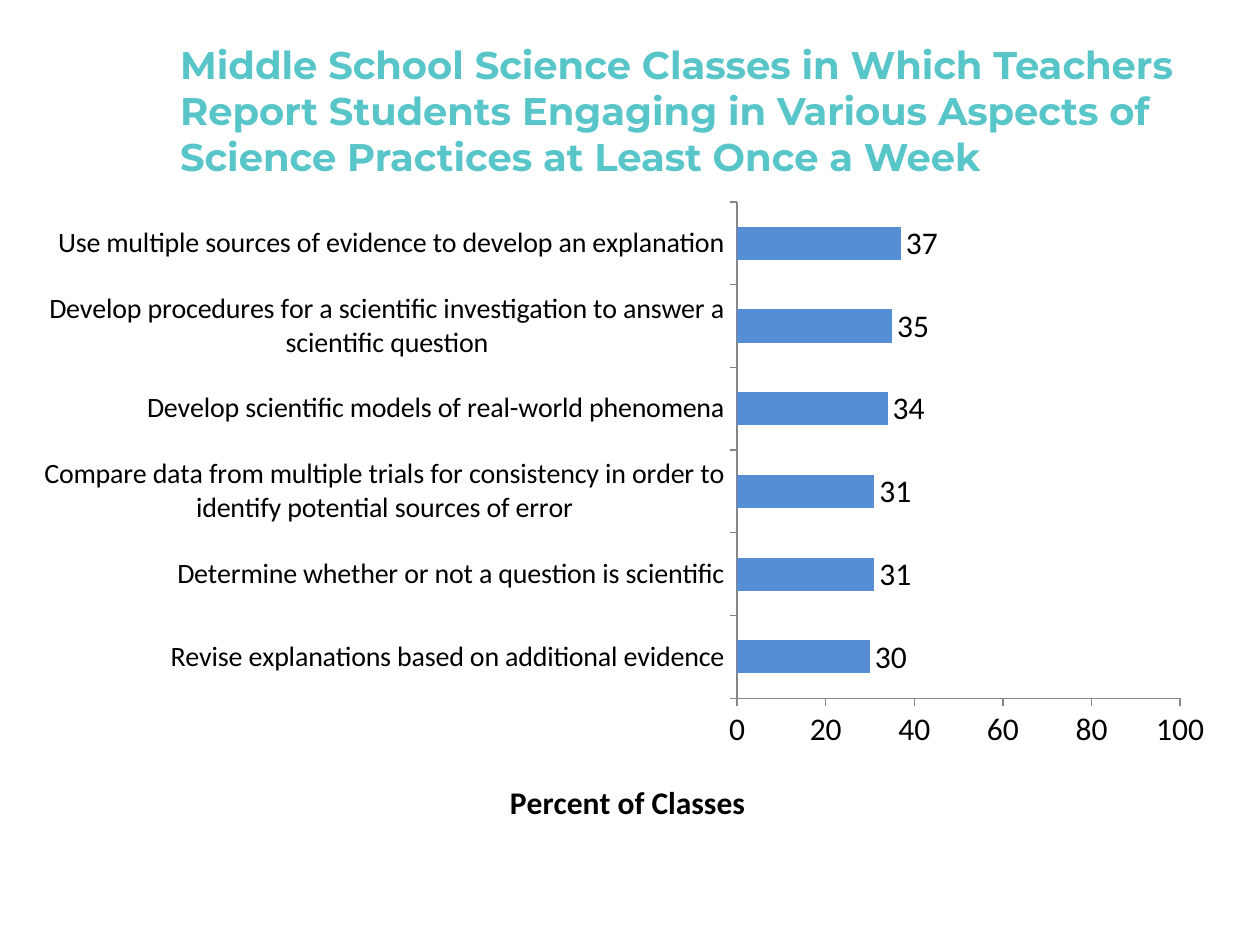
"""Build a slide with a bar chart of weekly science practices in middle school classes."""
from lxml import etree
from pptx import Presentation
from pptx.chart.data import CategoryChartData
from pptx.dml.color import RGBColor
from pptx.enum.chart import XL_CHART_TYPE as CT, XL_LABEL_POSITION as LP, XL_TICK_MARK as TM
from pptx.enum.text import MSO_ANCHOR, MSO_AUTO_SIZE, PP_ALIGN
from pptx.oxml.ns import qn
from pptx.util import Inches, Pt

TITLE = ("Middle School Science Classes in Which Teachers Report Students Engaging "
         "in Various Aspects of Science Practices at Least Once a Week")
AXIS_TITLE = "Percent of Classes"
PRACTICES = [
    ("Revise explanations based on additional evidence", 30),
    ("Determine whether or not a question is scientific", 31),
    ("Compare data from multiple trials for consistency in order to "
     "identify potential sources of error", 31),
    ("Develop scientific models of real-world phenomena", 34),
    ("Develop procedures for a scientific investigation to answer a "
     "scientific question", 35),
    ("Use multiple sources of evidence to develop an explanation", 37),
]
TEAL = RGBColor(0x58, 0xC5, 0xC9)
BLUE = RGBColor(0x55, 0x8E, 0xD5)
GRAY = RGBColor(0x86, 0x86, 0x86)
BLACK = RGBColor(0, 0, 0)


def set_layout(parent, index, **values):
    for old in parent.findall(qn("c:layout")):
        parent.remove(old)
    layout = etree.Element(qn("c:layout"))
    manual = etree.SubElement(layout, qn("c:manualLayout"))
    for name, value in values.items():
        etree.SubElement(manual, qn(f"c:{name}")).set("val", str(value))
    parent.insert(index, layout)


def add_title(s):
    sp = s.shapes.title
    sp.left, sp.top, sp.width, sp.height = map(Inches, (1.33, 0.25, 8.17, 1.25))
    tf = sp.text_frame
    tf.word_wrap = True
    tf.auto_size = MSO_AUTO_SIZE.NONE
    tf.vertical_anchor = MSO_ANCHOR.MIDDLE
    p = tf.paragraphs[0]
    p.alignment = PP_ALIGN.LEFT
    r = p.add_run()
    r.text = TITLE
    r.font.name, r.font.size, r.font.bold = "Montserrat", Pt(22), True
    r.font.color.rgb = TEAL


def add_bars(s):
    data = CategoryChartData()
    data.categories = [name for name, _ in PRACTICES]
    data.add_series("Series 1", [value for _, value in PRACTICES])
    box = map(Inches, (0.17, 1.5, 9.58, 5.17))
    chart = s.shapes.add_chart(CT.BAR_CLUSTERED, *box, data).chart
    chart.has_legend = chart.has_title = False
    chart.font.name, chart.font.size = "Calibri", Pt(18)
    chart.font.color.rgb = BLACK

    plot = chart.plots[0]
    plot.gap_width, plot.vary_by_categories = 150, False
    bars = plot.series[0]
    bars.format.fill.solid()
    bars.format.fill.fore_color.rgb = BLUE
    labels = bars.data_labels
    labels.show_value, labels.position = True, LP.OUTSIDE_END

    cat, val = chart.category_axis, chart.value_axis
    for axis in (cat, val):
        axis.has_major_gridlines = False
        axis.major_tick_mark, axis.minor_tick_mark = TM.OUTSIDE, TM.NONE
        axis.format.line.color.rgb = GRAY
        axis.format.line.width = Pt(0.75)
    cat.tick_labels.font.size = Pt(16)
    val.minimum_scale, val.maximum_scale, val.major_unit = 0, 100, 20
    p = val.axis_title.text_frame.paragraphs[0]
    r = p.add_run()
    r.text = AXIS_TITLE
    r.font.size, r.font.bold = Pt(18), True

    plot_area = chart.element.find(f".//{qn('c:plotArea')}")
    set_layout(plot_area, 0, layoutTarget="inner", xMode="edge", yMode="edge",
               x=0.593, y=0.02, w=0.367, h=0.762)
    title = plot_area.find(f".//{qn('c:title')}")
    set_layout(title, 1, xMode="edge", yMode="edge", x=0.4, y=0.9)


def main():
    prs = Presentation()
    prs.slide_width, prs.slide_height = Inches(10), Inches(7.5)
    s = prs.slides.add_slide(prs.slide_layouts[5])
    add_bars(s)
    add_title(s)
    prs.save("out.pptx")


if __name__ == "__main__":
    main()
